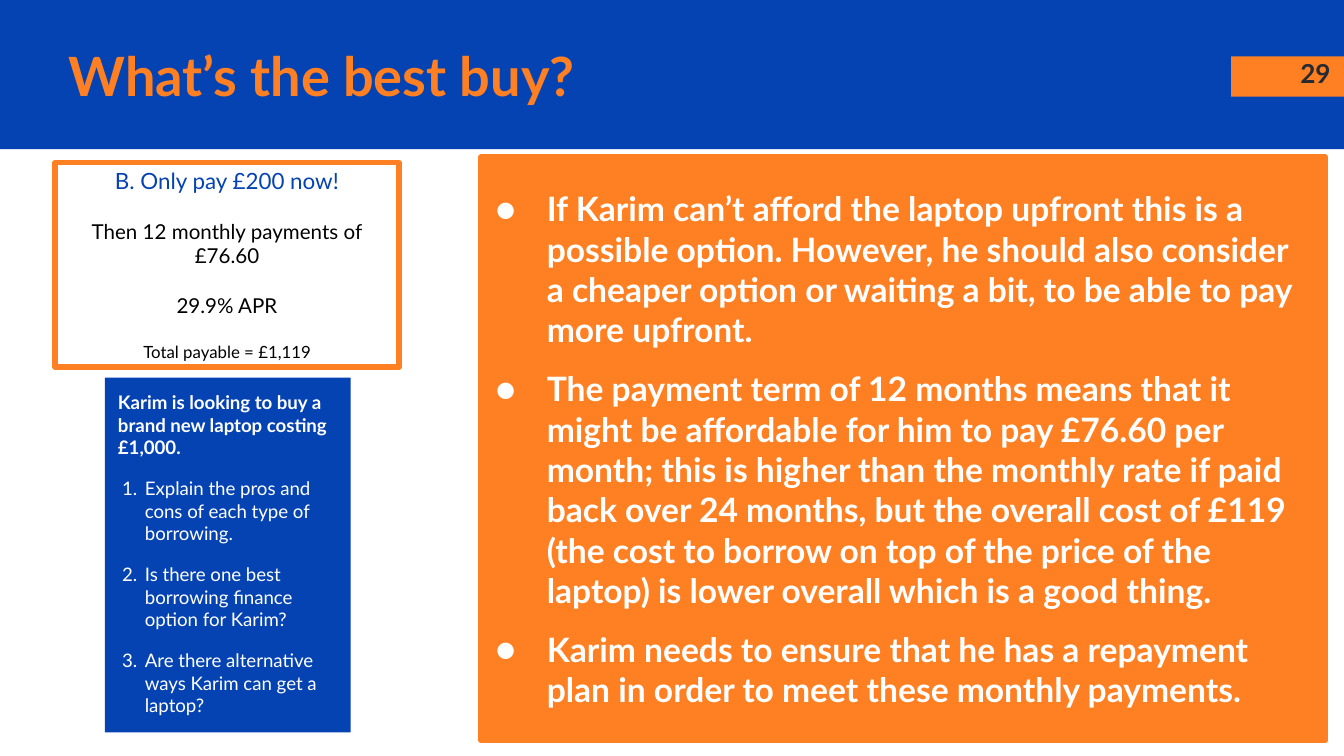
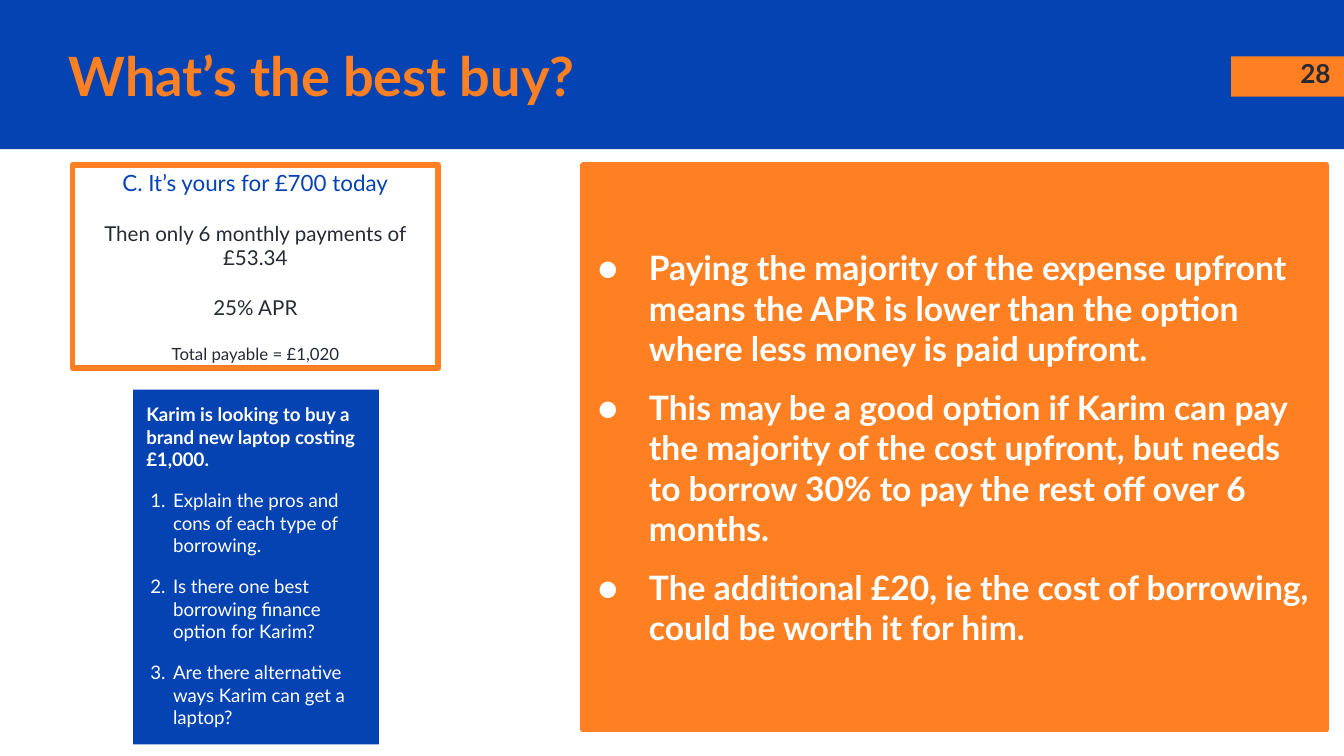
"""Build two slides that compare ways to pay for a laptop."""
from dataclasses import dataclass

from pptx import Presentation
from pptx import util as u
from pptx.dml import color
from pptx.enum import shapes, text
from pptx.oxml import xmlchemy

PX = u.Inches(1) // 100
SLIDE_WIDTH = 1000 * PX
SLIDE_HEIGHT = SLIDE_WIDTH * 9 // 16
INSET = 10


@dataclass(frozen=True)
class Theme:
    """Colours, font and type sizes shared by the slides."""
    blue: str = "0543B3"
    orange: str = "FF8022"
    white: str = "FFFFFF"
    black: str = "000000"
    ink: str = "262A33"
    font: str = "Lato"
    title: float = 29
    number: float = 14
    answer: float = 18
    offer: float = 12
    terms: float = 11
    total: float = 9
    task: float = 10
    gap: float = 10
    offer_gap: float = 13.2
    border: float = 3


THEME = Theme()
TITLE = "What’s the best buy?"
TASK = "Karim is looking to buy a brand new laptop costing £1,000."
QUESTIONS = [
    "Explain the pros and cons of each type of borrowing.",
    "Is there one best borrowing finance option for Karim?",
    "Are there alternative ways Karim can get a laptop?",
]
SLIDES = [
    {
        "number": "29",
        "offer_box": (41, 121, 256, 152),
        "offer": ["B. Only pay £200 now!", "Then 12 monthly payments of £76.60",
                  "29.9% APR", "Total payable = £1,119"],
        "offer_colour": THEME.black,
        "answer_box": (358, 117, 628, 434),
        "answers": [
            "If Karim can’t afford the laptop upfront this is a possible option. However, he should "
            "also consider a cheaper option or waiting a bit, to be able to pay more upfront.",
            "The payment term of 12 months means that it might be affordable for him to pay £76.60 "
            "per month; this is higher than the monthly rate if paid back over 24 months, but the "
            "overall cost of £119 (the cost to borrow on top of the price of the laptop) is lower "
            "overall which is a good thing.",
            "Karim needs to ensure that he has a repayment plan in order to meet these monthly "
            "payments.",
        ],
        "task_box": (78, 281, 183, 264),
    },
    {
        "number": "28",
        "offer_box": (54, 123, 272, 151),
        "offer": ["C. It’s yours for £700 today", "Then only 6 monthly payments of £53.34",
                  "25% APR", "Total payable = £1,020"],
        "offer_colour": THEME.ink,
        "answer_box": (434, 123, 553, 420),
        "answers": [
            "Paying the majority of the expense upfront means the APR is lower than the option "
            "where less money is paid upfront.",
            "This may be a good option if Karim can pay the majority of the cost upfront, but needs "
            "to borrow 30% to pay the rest off over 6 months.",
            "The additional £20, ie the cost of borrowing, could be worth it for him.",
        ],
        "task_box": (99, 290, 183, 264),
    },
]


def rgb(value):
    """Turn a hex string into a colour."""
    return color.RGBColor.from_string(value)


def scale(box):
    """Turn a box in px into EMU."""
    return [length * PX for length in box]


def make_element(tag, **attributes):
    """Make a drawing element with its attributes."""
    element = xmlchemy.OxmlElement(tag)
    for name, value in attributes.items():
        element.set(name, value)
    return element


def set_frame(frame, anchor=text.MSO_ANCHOR.TOP):
    """Apply the shared insets, wrapping and an anchor to a text frame."""
    frame.word_wrap = True
    frame.auto_size = text.MSO_AUTO_SIZE.NONE
    frame.vertical_anchor = anchor
    frame.margin_left = frame.margin_right = INSET * PX
    frame.margin_top = frame.margin_bottom = INSET * PX


def add_box(slide, box, fill, border=None):
    """Add a filled rectangle with an optional border."""
    shape = slide.shapes.add_shape(shapes.MSO_SHAPE.RECTANGLE, *scale(box))
    shape.shadow.inherit = False
    shape.fill.solid()
    shape.fill.fore_color.rgb = rgb(fill)
    if border:
        shape.line.color.rgb = rgb(border)
        shape.line.width = u.Pt(THEME.border)
        shape.line._get_or_add_ln().append(make_element("a:round"))
    else:
        shape.line.fill.background()
    return shape


def write(frame, index, words, size, colour, bold=False, align=text.PP_ALIGN.LEFT,
          gap=THEME.gap, bullet=None):
    """Write one paragraph, adding it when it is not the first."""
    paragraph = frame.add_paragraph() if index else frame.paragraphs[0]
    paragraph.text = words
    paragraph.alignment = align
    if index:
        paragraph.space_before = u.Pt(gap)
    if bullet:
        add_bullet(paragraph, colour, *bullet)
    font = paragraph.font
    font.name, font.size, font.bold = THEME.font, u.Pt(size), bold
    font.color.rgb = rgb(colour)
    return paragraph


def add_bullet(paragraph, colour, mark, left, hang):
    """Give a paragraph a coloured bullet or number and a hanging indent."""
    properties = paragraph._p.get_or_add_pPr()
    properties.set("marL", str(left * PX))
    properties.set("indent", str(-hang * PX))
    bullet_colour = make_element("a:buClr")
    bullet_colour.append(make_element("a:srgbClr", val=colour))
    bullet_font = make_element("a:buFont", typeface=THEME.font)
    tag, attributes = mark
    properties.extend([bullet_colour, bullet_font, make_element(tag, **attributes)])


def decorate_layout(layout, slide):
    """Move the title band and the number tab to the shared layout."""
    for placeholder in list(layout.placeholders):
        if placeholder.placeholder_format.idx:
            layout.shapes.element.remove(placeholder.element)
    band = add_box(slide, (0, 0, 1000, 111), THEME.blue)
    tab = add_box(slide, (916, 42, 84, 30), THEME.orange)
    title = layout.placeholders[0].element
    for shape in (band, tab):
        title.addprevious(shape.element)


def add_heading(slide, number):
    """Place the title and the slide number on the band."""
    title = slide.shapes.title
    title.left, title.top, title.width, title.height = scale((41, 28, 783, 56))
    set_frame(title.text_frame, text.MSO_ANCHOR.MIDDLE)
    write(title.text_frame, 0, TITLE, THEME.title, THEME.orange, bold=True)
    label = slide.shapes.add_textbox(*scale((940, 33, 60, 43)))
    set_frame(label.text_frame)
    write(label.text_frame, 0, number, THEME.number, THEME.ink, bold=True,
          align=text.PP_ALIGN.RIGHT)


def add_offer(slide, box, lines, colour):
    """Add the bordered card with the terms of one offer."""
    frame = add_box(slide, box, THEME.white, THEME.orange).text_frame
    set_frame(frame, text.MSO_ANCHOR.MIDDLE)
    sizes = (THEME.offer, THEME.terms, THEME.terms, THEME.total)
    for index, (line, size) in enumerate(zip(lines, sizes)):
        write(frame, index, line, size, colour if index else THEME.blue,
              align=text.PP_ALIGN.CENTER, gap=THEME.offer_gap)


def add_answers(slide, box, answers):
    """Add the large panel of bulleted answers."""
    frame = add_box(slide, box, THEME.orange, THEME.orange).text_frame
    set_frame(frame, text.MSO_ANCHOR.MIDDLE)
    mark = ("a:buChar", {"char": "●"})
    for index, answer in enumerate(answers):
        paragraph = write(frame, index, answer, THEME.answer, THEME.white, bold=True,
                          bullet=(mark, 39, 38))
    paragraph.space_after = u.Pt(THEME.gap)


def add_task(slide, box):
    """Add the task panel with its numbered questions."""
    frame = add_box(slide, box, THEME.blue).text_frame
    set_frame(frame)
    frame.auto_size = text.MSO_AUTO_SIZE.SHAPE_TO_FIT_TEXT
    write(frame, 0, TASK, THEME.task, THEME.white, bold=True)
    mark = ("a:buAutoNum", {"type": "arabicPeriod"})
    for index, question in enumerate(QUESTIONS, start=1):
        paragraph = write(frame, index, question, THEME.task, THEME.white,
                          bullet=(mark, 20, 17))
    paragraph.space_after = u.Pt(THEME.gap)


def main():
    """Build and save the presentation."""
    presentation = Presentation()
    presentation.slide_width = SLIDE_WIDTH
    presentation.slide_height = SLIDE_HEIGHT
    layout = presentation.slide_layouts.get_by_name("Title Only")
    for index, content in enumerate(SLIDES):
        slide = presentation.slides.add_slide(layout)
        if index == 0:
            decorate_layout(layout, slide)
        add_heading(slide, content["number"])
        add_offer(slide, content["offer_box"], content["offer"], content["offer_colour"])
        add_answers(slide, content["answer_box"], content["answers"])
        add_task(slide, content["task_box"])
    presentation.save("out.pptx")


if __name__ == "__main__":
    main()
